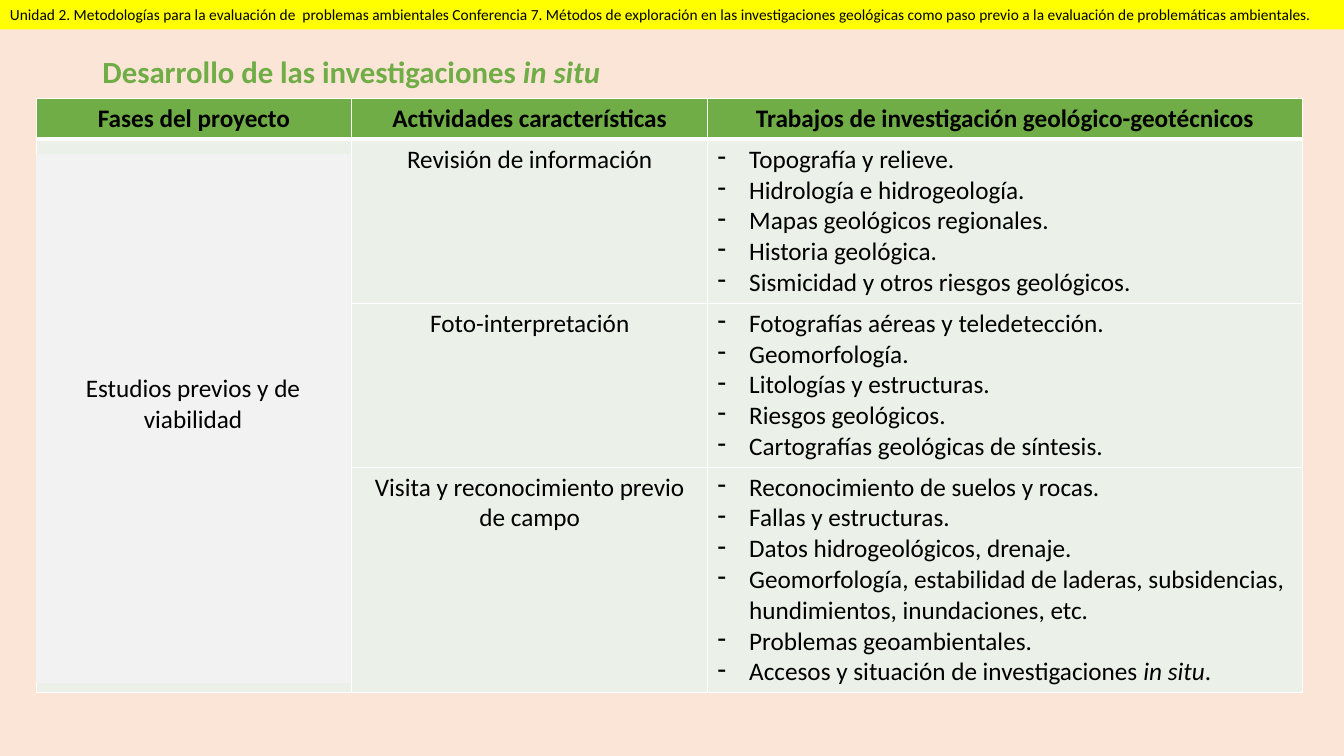
from lxml.etree import SubElement
from pptx import Presentation
from pptx.dml.color import RGBColor
from pptx.enum.shapes import MSO_SHAPE
from pptx.enum.text import MSO_ANCHOR, MSO_AUTO_SIZE, PP_ALIGN
from pptx.oxml import parse_xml
from pptx.oxml.ns import nsdecls, qn
from pptx.util import Pt

BLACK, WHITE, GREEN, PALE_GREEN = "000000", "FFFFFF", "70AD47", "EBF1E9"
GREY, YELLOW, PEACH = "F2F2F2", "FFFF00", "FBE5D6"

COLUMN_WIDTHS = [225.4, 254.2, 424.8]
ROW_HEIGHTS = [29.2, 117.1, 117.1, 161]
HEADERS = [
    "Fases del proyecto",
    "Actividades características",
    "Trabajos de investigación geológico-geotécnicos",
]
PHASE = "Estudios previos y de viabilidad"
ACTIVITIES = [
    ("Revisión de información", [
        [("Topografía y relieve.", False)],
        [("Hidrología e hidrogeología.", False)],
        [("Mapas geológicos regionales.", False)],
        [("Historia geológica.", False)],
        [("Sismicidad y otros riesgos geológicos.", False)],
    ]),
    ("Foto-interpretación", [
        [("Fotografías aéreas y teledetección.", False)],
        [("Geomorfología.", False)],
        [("Litologías y estructuras.", False)],
        [("Riesgos geológicos.", False)],
        [("Cartografías geológicas de síntesis.", False)],
    ]),
    ("Visita y reconocimiento previo de campo", [
        [("Reconocimiento de suelos y rocas.", False)],
        [("Fallas y estructuras.", False)],
        [("Datos hidrogeológicos, drenaje.", False)],
        [("Geomorfología, estabilidad de laderas, subsidencias, "
          "hundimientos, inundaciones, etc.", False)],
        [("Problemas geoambientales.", False)],
        [("Accesos y situación de investigaciones ", False), ("in situ", True), (".", False)],
    ]),
]


def set_format(target, values):
    for name, value in values.items():
        setattr(target, name, value)


def color(hex_value):
    return RGBColor.from_string(hex_value)


def paint(fill, hex_value):
    fill.solid()
    fill.fore_color.rgb = color(hex_value)


def write(paragraph, parts, size=18, hex_value=BLACK, bold=False, alignment=PP_ALIGN.LEFT):
    paragraph.alignment = alignment
    for text, italic in parts:
        run = paragraph.add_run()
        run.text = text
        set_format(run.font, {"name": "Calibri", "size": Pt(size), "bold": bold, "italic": italic})
        run.font.color.rgb = color(hex_value)


def add_dash(paragraph):
    properties = paragraph._p.get_or_add_pPr()
    properties.set("marL", str(Pt(22.5)))
    properties.set("indent", str(-Pt(22.5)))
    SubElement(properties, qn("a:buFontTx"))
    SubElement(properties, qn("a:buChar")).set("char", "-")


def set_borders(cell, bottom_width):
    properties = cell._tc.get_or_add_tcPr()
    widths = {"lnL": 1, "lnR": 1, "lnT": 1, "lnB": bottom_width}
    for index, (side, width) in enumerate(widths.items()):
        properties.insert(index, parse_xml(
            f'<a:{side} {nsdecls("a")} w="{Pt(width)}"><a:solidFill>'
            f'<a:srgbClr val="{WHITE}"/></a:solidFill></a:{side}>'))


def add_panel(slide, box, fill):
    shape = slide.shapes.add_shape(MSO_SHAPE.RECTANGLE, *map(Pt, box))
    shape.shadow.inherit = False
    paint(shape.fill, fill)
    shape.line.fill.background()
    set_format(shape.text_frame, {"word_wrap": True, "vertical_anchor": MSO_ANCHOR.MIDDLE})
    return shape


def add_banner(slide, box):
    banner = add_panel(slide, box, YELLOW)
    set_format(banner.text_frame, {"margin_top": 0, "margin_bottom": 0})
    text = ("Unidad 2. Metodologías para la evaluación de  problemas ambientales "
            "Conferencia 7. Métodos de exploración en las investigaciones geológicas "
            "como paso previo a la evaluación de problemáticas ambientales.")
    write(banner.text_frame.paragraphs[0], [(text, False)], size=11)


def add_title(slide, box):
    title = slide.shapes.title
    set_format(title, dict(zip(("left", "top", "width", "height"), map(Pt, box))))
    set_format(title.text_frame, {
        "word_wrap": True, "auto_size": MSO_AUTO_SIZE.NONE, "vertical_anchor": MSO_ANCHOR.MIDDLE})
    paragraph = title.text_frame.paragraphs[0]
    paragraph.line_spacing = 1.0
    write(paragraph, [("Desarrollo de las investigaciones", False), (" in situ", True)],
          size=22, hex_value=GREEN, bold=True)


def add_project_table(slide, box):
    table = slide.shapes.add_table(len(ROW_HEIGHTS), len(COLUMN_WIDTHS), *map(Pt, box)).table
    for column, width in zip(table.columns, COLUMN_WIDTHS):
        column.width = Pt(width)
    for index, (row, height) in enumerate(zip(table.rows, ROW_HEIGHTS)):
        row.height = Pt(height)
        for cell in row.cells:
            paint(cell.fill, PALE_GREEN if index else GREEN)
            set_borders(cell, 1 if index else 3)
    for index, header in enumerate(HEADERS):
        write(table.cell(0, index).text_frame.paragraphs[0], [(header, False)],
              bold=True, alignment=PP_ALIGN.CENTER)
    table.cell(1, 0).merge(table.cell(len(ACTIVITIES), 0))
    for index, (activity, tasks) in enumerate(ACTIVITIES, start=1):
        write(table.cell(index, 1).text_frame.paragraphs[0], [(activity, False)],
              alignment=PP_ALIGN.CENTER)
        frame = table.cell(index, 2).text_frame
        for number, parts in enumerate(tasks):
            paragraph = frame.add_paragraph() if number else frame.paragraphs[0]
            write(paragraph, parts)
            add_dash(paragraph)


def add_phase(slide, box):
    phase = add_panel(slide, box, GREY)
    phase.text_frame.margin_bottom = Pt(26)
    write(phase.text_frame.paragraphs[0], [(PHASE, False)], alignment=PP_ALIGN.CENTER)


def main():
    presentation = Presentation()
    set_format(presentation, {"slide_width": Pt(960), "slide_height": Pt(540)})
    slide = presentation.slides.add_slide(presentation.slide_layouts[5])
    paint(slide.background.fill, PEACH)
    left, top = 25.9, 70.3
    add_project_table(slide, (left, top, sum(COLUMN_WIDTHS), sum(ROW_HEIGHTS)))
    add_phase(slide, (left, top + 39.7, 224, 378))
    add_title(slide, (66, 34, 465, 34))
    add_banner(slide, (0, 0, 960, 21))
    presentation.save("out.pptx")


if __name__ == "__main__":
    main()
